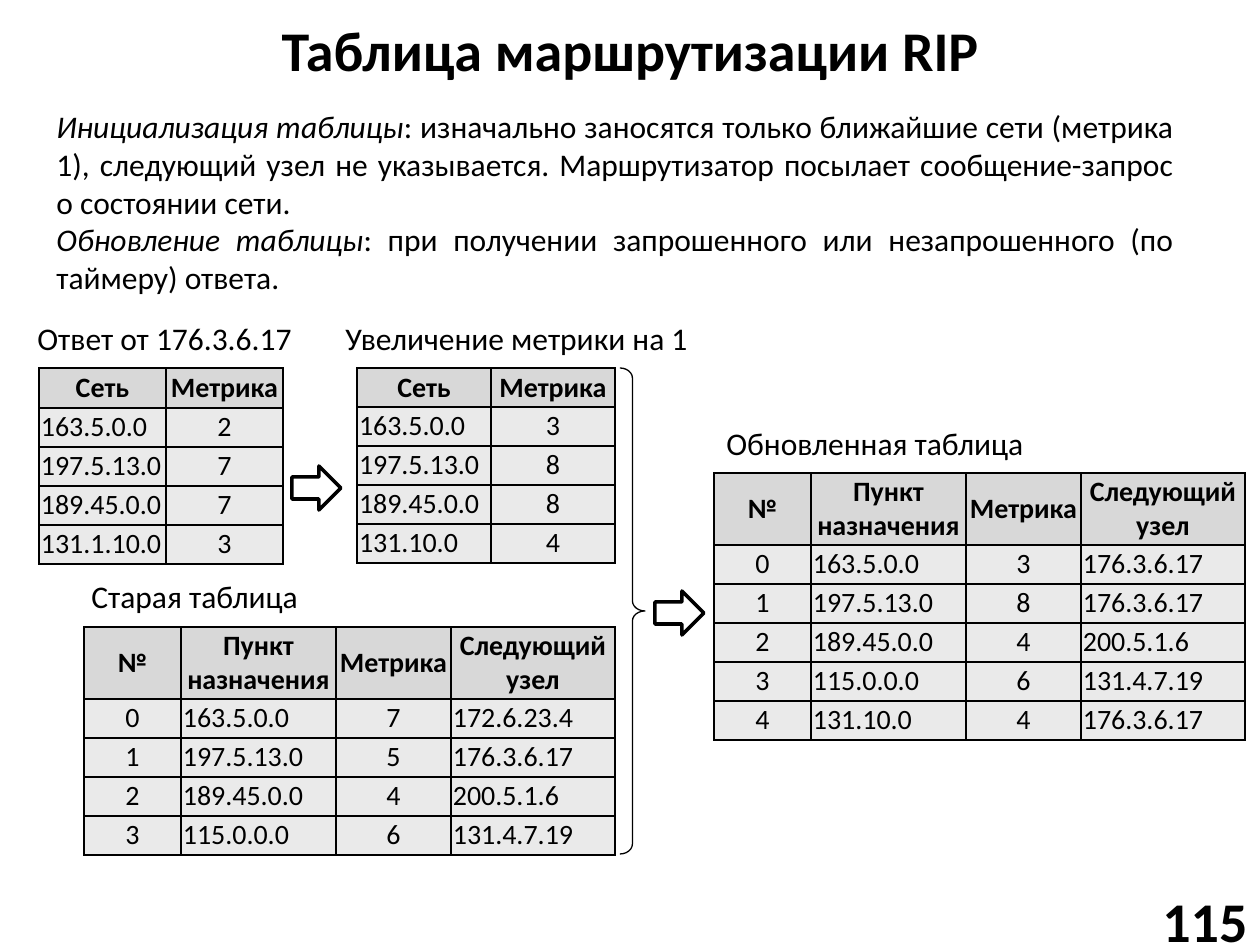
from dataclasses import dataclass

from lxml.etree import SubElement
from pptx import Presentation
from pptx.dml.color import RGBColor
from pptx.enum.shapes import MSO_SHAPE as Shape
from pptx.enum.text import MSO_ANCHOR as Anchor, PP_ALIGN as Align
from pptx.oxml.ns import qn
from pptx.util import Emu, Pt

EMU_PER_PX = 914400 / 126


@dataclass(frozen=True)
class Theme:
    font: str = "Calibri"
    ink: RGBColor = RGBColor(0x00, 0x00, 0x00)
    paper: RGBColor = RGBColor(0xFF, 0xFF, 0xFF)
    header: RGBColor = RGBColor(0xD8, 0xD8, 0xD8)
    body: RGBColor = RGBColor(0xEA, 0xEA, 0xEA)
    title_size: int = 32
    text_size: int = 18
    table_size: int = 16


THEME = Theme()
ROW_HEIGHT = 39
CELL_INSET = 2

# Table contents
SHORT_HEADER = ("Сеть", "Метрика")
FULL_HEADER = ("№", "Пункт назначения", "Метрика", "Следующий узел")
FULL_COLUMNS = (97, 155, 115, 164)
ANSWER = [("163.5.0.0", "2"), ("197.5.13.0", "7"),
          ("189.45.0.0", "7"), ("131.1.10.0", "3")]
INCREASED = [("163.5.0.0", "3"), ("197.5.13.0", "8"),
             ("189.45.0.0", "8"), ("131.10.0", "4")]
OLD = [("0", "163.5.0.0", "7", "172.6.23.4"),
       ("1", "197.5.13.0", "5", "176.3.6.17"),
       ("2", "189.45.0.0", "4", "200.5.1.6"),
       ("3", "115.0.0.0", "6", "131.4.7.19")]
UPDATED = [("0", "163.5.0.0", "3", "176.3.6.17"),
           ("1", "197.5.13.0", "8", "176.3.6.17"),
           ("2", "189.45.0.0", "4", "200.5.1.6"),
           ("3", "115.0.0.0", "6", "131.4.7.19"),
           ("4", "131.10.0", "4", "176.3.6.17")]


def px(length):
    return Emu(round(length * EMU_PER_PX))


def scaled(*lengths):
    return [px(length) for length in lengths]


def style_span(span, size, bold=False, italic=False):
    font = span.font
    font.name, font.size = THEME.font, Pt(size)
    font.bold, font.italic = bold, italic
    font.color.rgb = THEME.ink


def style_para(para, size, align=Align.LEFT, bold=False):
    para.alignment = align
    for span in para.runs:
        style_span(span, size, bold)


def add_title(page, text):
    title = page.shapes.title
    title.left, title.top, title.width, title.height = scaled(35, 6, 1191, 87)
    title.text_frame.text = text
    title.text_frame.vertical_anchor = Anchor.MIDDLE
    style_para(title.text_frame.paragraphs[0], THEME.title_size,
               Align.CENTER, bold=True)


def add_page_number(page, text):
    box = page.shapes.add_textbox(*scaled(1116, 895, 144, 50))
    box.text_frame.text = text
    box.text_frame.vertical_anchor = Anchor.MIDDLE
    box.text_frame.word_wrap = True
    style_para(box.text_frame.paragraphs[0], THEME.title_size,
               Align.RIGHT, bold=True)


def add_definition(page, top, height, term, meaning):
    box = page.shapes.add_textbox(*scaled(44, top, 1142, height))
    box.text_frame.word_wrap = True
    para = box.text_frame.paragraphs[0]
    para.alignment = Align.JUSTIFY
    for text, italic in ((term, True), (meaning, False)):
        span = para.add_run()
        span.text = text
        style_span(span, THEME.text_size, italic=italic)


def add_caption(page, left, top, width, text):
    box = page.shapes.add_textbox(*scaled(left, top, width, 50))
    box.text_frame.word_wrap = False
    box.text_frame.text = text
    style_para(box.text_frame.paragraphs[0], THEME.text_size)


def outline_cell(cell):
    properties = cell._tc.get_or_add_tcPr()
    # Borders come before the fill in the cell properties
    for position, side in enumerate(("a:lnL", "a:lnR", "a:lnT", "a:lnB")):
        line = SubElement(properties, qn(side), w=str(Pt(1)))
        fill = SubElement(line, qn("a:solidFill"))
        SubElement(fill, qn("a:srgbClr"), val=str(THEME.ink))
        properties.insert(position, line)


def fill_cell(cell, text, is_header, align):
    cell.text_frame.text = text
    cell.vertical_anchor = Anchor.MIDDLE if is_header else Anchor.TOP
    cell.margin_left = cell.margin_right = px(CELL_INSET)
    cell.margin_top = cell.margin_bottom = px(CELL_INSET)
    cell.fill.solid()
    cell.fill.fore_color.rgb = THEME.header if is_header else THEME.body
    style_para(cell.text_frame.paragraphs[0], THEME.table_size, align, is_header)
    outline_cell(cell)


def add_routes(page, left, top, columns, header, routes, header_height):
    rows = [header, *routes]
    height = header_height + ROW_HEIGHT * len(routes)
    frame = page.shapes.add_table(len(rows), len(columns),
                                  *scaled(left, top, sum(columns), height))
    table = frame.table
    table.horz_banding = False
    for column, width in zip(table.columns, columns):
        column.width = px(width)
    for r, values in enumerate(rows):
        table.rows[r].height = px(ROW_HEIGHT if r else header_height)
        for c, value in enumerate(values):
            # Addresses are left-aligned, everything else is centred
            align = Align.LEFT if "." in value else Align.CENTER
            fill_cell(table.cell(r, c), value, r == 0, align)


def add_outline(page, kind, left, top, width, height, weight):
    shape = page.shapes.add_shape(kind, *scaled(left, top, width, height))
    shape.shadow.inherit = False
    shape.line.color.rgb = THEME.ink
    shape.line.width = Pt(weight)
    return shape


def add_arrow(page, left, top):
    arrow = add_outline(page, Shape.RIGHT_ARROW, left, top, 49, 44, 2)
    arrow.fill.solid()
    arrow.fill.fore_color.rgb = THEME.paper


def add_brace(page, left, top, width, height):
    brace = add_outline(page, Shape.RIGHT_BRACE, left, top, width, height, 0.75)
    brace.fill.background()
    brace.adjustments[0] = 0.4
    brace.adjustments[1] = 0.5


def main():
    deck = Presentation()
    deck.slide_width, deck.slide_height = scaled(1260, 945)
    page = deck.slides.add_slide(deck.slide_layouts[5])

    # Heading and explanation
    add_title(page, "Таблица маршрутизации RIP")
    add_page_number(page, "115")
    add_definition(page, 101, 127, "Инициализация таблицы",
                   ": изначально заносятся только ближайшие сети (метрика 1), "
                   "следующий узел не указывается. Маршрутизатор посылает "
                   "сообщение-запрос о состоянии сети.")
    add_definition(page, 214, 89, "Обновление таблицы",
                   ": при получении запрошенного или незапрошенного "
                   "(по таймеру) ответа.")

    # Routing tables with captions
    add_caption(page, 25, 313, 282, "Ответ от 176.3.6.17")
    add_routes(page, 39, 368, (127, 117), SHORT_HEADER, ANSWER, 40)
    add_caption(page, 333, 313, 372, "Увеличение метрики на 1")
    add_routes(page, 357, 368, (134, 124), SHORT_HEADER, INCREASED, 39)
    add_caption(page, 79, 571, 234, "Старая таблица")
    add_routes(page, 84, 627, FULL_COLUMNS, FULL_HEADER, OLD, 72)
    add_caption(page, 714, 418, 331, "Обновленная таблица")
    add_routes(page, 714, 473, FULL_COLUMNS, FULL_HEADER, UPDATED, 72)

    # Flow between the tables
    add_arrow(page, 292, 466)
    add_brace(page, 620, 368, 25, 486)
    add_arrow(page, 655, 591)

    deck.save("out.pptx")


if __name__ == "__main__":
    main()
